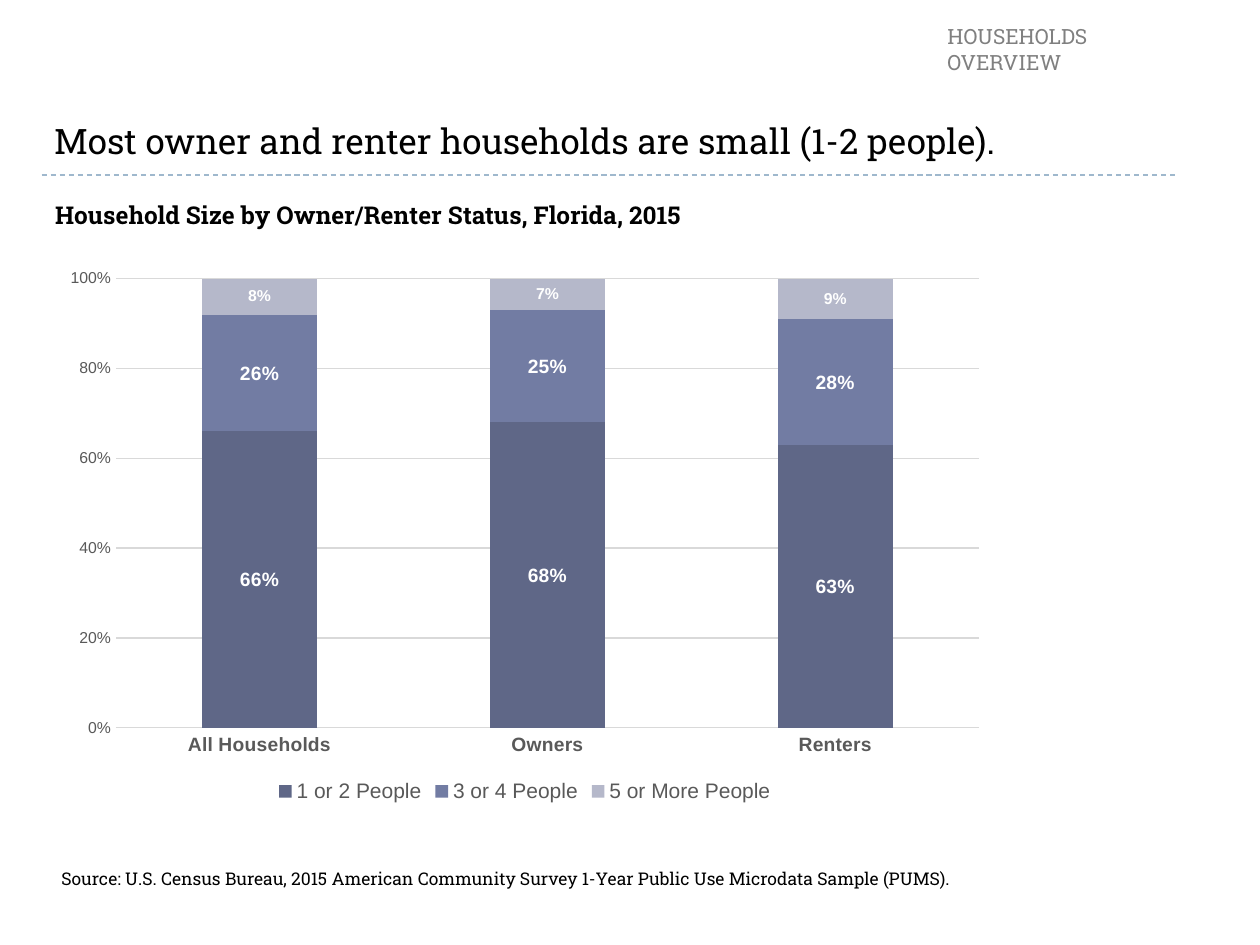
import pptx
import pptx.chart.data
import pptx.dml.color
import pptx.enum.chart
import pptx.enum.dml
import pptx.enum.shapes
import pptx.enum.text
import pptx.util
from lxml import etree

Cm, Pt = pptx.util.Cm, pptx.util.Pt
RGBColor = pptx.dml.color.RGBColor

BLACK = RGBColor(0x00, 0x00, 0x00)
WHITE = RGBColor(0xFF, 0xFF, 0xFF)
HEADER_GRAY = RGBColor(0x80, 0x80, 0x80)
AXIS_GRAY = RGBColor(0x59, 0x59, 0x59)
GRID_GRAY = RGBColor(0xD9, 0xD9, 0xD9)
RULE_BLUE = RGBColor(0x9F, 0xB8, 0xCD)
SLATE = RGBColor(0x5F, 0x67, 0x87)
PERIWINKLE = RGBColor(0x72, 0x7C, 0xA3)
MIST = RGBColor(0xB5, 0xB8, 0xCA)

TEXT_FONT = "Roboto Slab"
CHART_FONT = "Arial"
TOP = pptx.enum.text.MSO_ANCHOR.TOP
BOTTOM = pptx.enum.text.MSO_ANCHOR.BOTTOM

# Content: text, (left, top, width, height) in cm, size, colour, bold, anchor
TEXTS = [
    ("Most owner and renter households are small (1-2 people).",
     (0.84, 1.68, 22.86, 1.7), 20, BLACK, False, BOTTOM),
    ("Source: U.S. Census Bureau, 2015 American Community Survey 1-Year "
     "Public Use Microdata Sample (PUMS).",
     (0.99, 17.37, 23.14, 0.69), 10, BLACK, False, TOP),
    ("Household Size by Owner/Renter Status, Florida, 2015",
     (0.86, 3.91, 14.17, 0.86), 14, BLACK, True, TOP),
    ("HOUSEHOLDS OVERVIEW",
     (18.85, 0.36, 5.6, 0.76), 12, HEADER_GRAY, False, TOP),
]
RULE = (0.84, 3.53, 23.7, 3.53)
CHART_BOX = (1.04, 5.21, 19.08, 11.07)
HOUSEHOLDS = ["All Households", "Owners", "Renters"]
# Series: name, shares, colour, label size
SIZES = [
    ("1 or 2 People", (0.66, 0.68, 0.63), SLATE, 11),
    ("3 or 4 People", (0.26, 0.25, 0.28), PERIWINKLE, 11),
    ("5 or More People", (0.08, 0.07, 0.09), MIST, 9),
]


def style_font(font, name, size, color, bold=False):
    font.name = name
    font.size = Pt(size)
    font.color.rgb = color
    font.bold = bold


def style_line(line, color):
    line.color.rgb = color
    line.width = Pt(0.75)


def add_text(slide, text, box, size, color, bold, anchor):
    frame = slide.shapes.add_textbox(*map(Cm, box)).text_frame
    frame.word_wrap = True
    frame.vertical_anchor = anchor
    run = frame.paragraphs[0].add_run()
    run.text = text
    style_font(run.font, TEXT_FONT, size, color, bold)


def add_rule(slide):
    rule = slide.shapes.add_connector(
        pptx.enum.shapes.MSO_CONNECTOR.STRAIGHT, *map(Cm, RULE))
    style_line(rule.line, RULE_BLUE)
    rule.line.dash_style = pptx.enum.dml.MSO_LINE.DASH
    etree.SubElement(rule.element.spPr, pptx.oxml.ns.qn("a:effectLst"))


def add_household_chart(slide):
    data = pptx.chart.data.CategoryChartData(number_format="0%")
    data.categories = HOUSEHOLDS
    for name, shares, _, _ in SIZES:
        data.add_series(name, shares)
    chart = slide.shapes.add_chart(
        pptx.enum.chart.XL_CHART_TYPE.COLUMN_STACKED,
        *map(Cm, CHART_BOX), data).chart
    chart.has_title = False
    style_font(chart.font, CHART_FONT, 10, BLACK)

    # Columns and their labels
    plot = chart.plots[0]
    plot.gap_width, plot.overlap = 150, 100
    plot.vary_by_categories = False
    for series, (_, _, color, label_size) in zip(plot.series, SIZES):
        series.format.fill.solid()
        series.format.fill.fore_color.rgb = color
        labels = series.data_labels
        labels.show_value = True
        labels.number_format = "0%"
        labels.number_format_is_linked = False
        style_font(labels.font, CHART_FONT, label_size, WHITE, True)

    # Axes
    no_tick = pptx.enum.chart.XL_TICK_MARK.NONE
    for axis, size, bold in ((chart.category_axis, 11, True),
                             (chart.value_axis, 9, False)):
        axis.major_tick_mark = axis.minor_tick_mark = no_tick
        style_font(axis.tick_labels.font, CHART_FONT, size, AXIS_GRAY, bold)
    style_line(chart.category_axis.format.line, GRID_GRAY)
    shares_axis = chart.value_axis
    shares_axis.minimum_scale, shares_axis.maximum_scale = 0, 1
    shares_axis.major_unit = 0.2
    shares_axis.tick_labels.number_format = "0%"
    shares_axis.tick_labels.number_format_is_linked = False
    shares_axis.format.line.fill.background()
    style_line(shares_axis.major_gridlines.format.line, GRID_GRAY)

    # Legend
    chart.has_legend = True
    chart.legend.position = pptx.enum.chart.XL_LEGEND_POSITION.BOTTOM
    chart.legend.include_in_layout = False
    style_font(chart.legend.font, CHART_FONT, 12, AXIS_GRAY)


def main():
    deck = pptx.Presentation()
    deck.slide_width, deck.slide_height = Cm(25.4), Cm(19.05)
    slide = deck.slides.add_slide(deck.slide_layouts[6])
    add_rule(slide)
    for entry in TEXTS:
        add_text(slide, *entry)
    add_household_chart(slide)
    deck.save("out.pptx")


if __name__ == "__main__":
    main()
